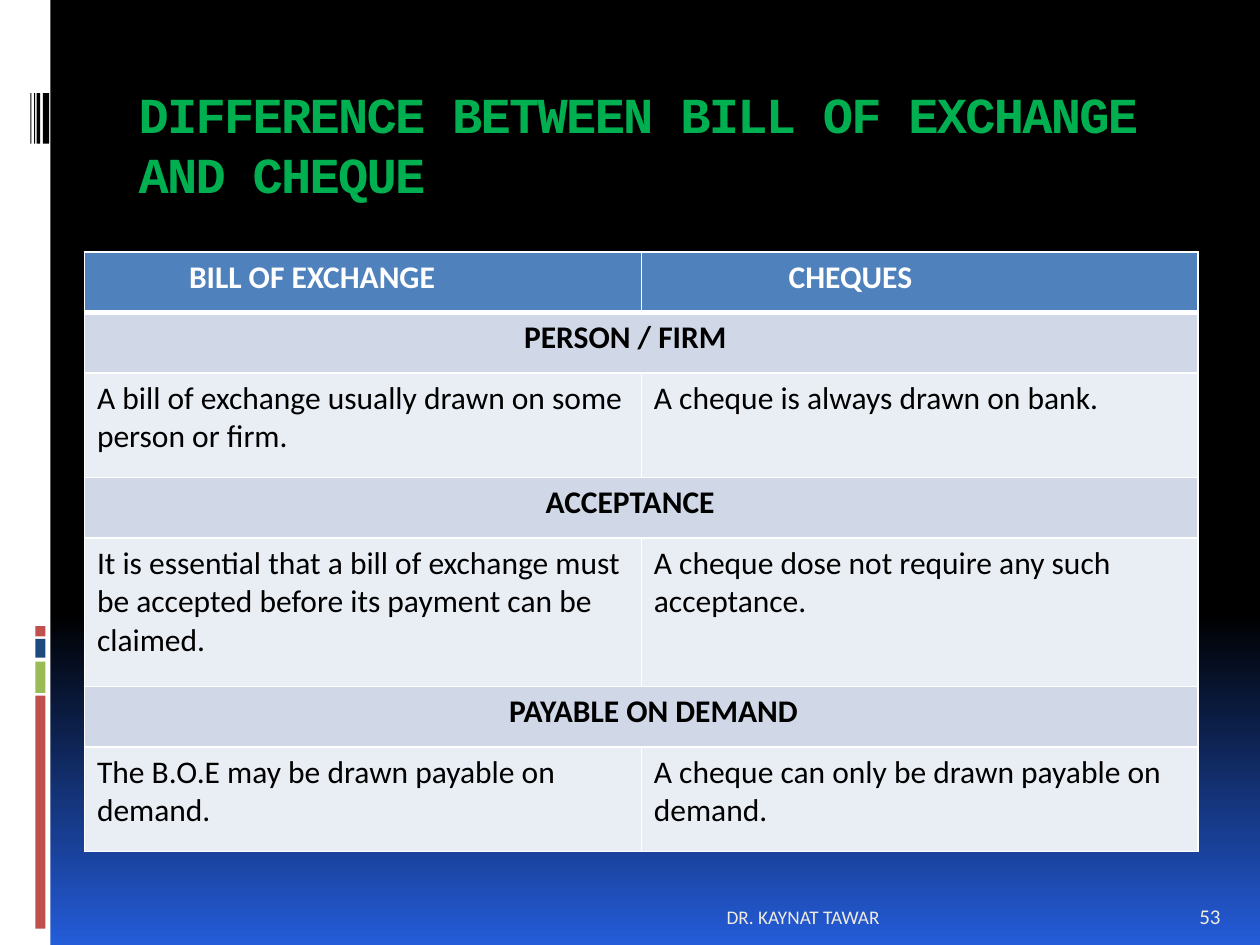
from copy import deepcopy

from lxml import etree
from pptx import Presentation
from pptx import util as u
from pptx.dml.color import RGBColor
from pptx.enum import shapes, text
from pptx.oxml.ns import qn

# Content
TITLE = "DIFFERENCE BETWEEN BILL OF EXCHANGE AND CHEQUE"
FOOTER, NUMBER = "DR. KAYNAT TAWAR", "53"
# Each entry is (text, left indent)
HEADER = [("BILL OF EXCHANGE", 0.83), ("CHEQUES", 1.17)]
SECTIONS = [
    (("PERSON / FIRM", 3.49),
     "A bill of exchange usually drawn on some person or firm.",
     "A cheque is always drawn on bank."),
    (("ACCEPTANCE", 3.66),
     "It is essential that a bill of exchange must be accepted before its payment can be claimed.",
     "A cheque dose not require any such acceptance."),
    (("PAYABLE ON DEMAND", 3.37),
     "The B.O.E may be drawn payable on demand.",
     "A cheque can only be drawn payable on demand."),
]

# Theme
THEME = {
    "font": "Calibri", "title_font": "Courier New",
    "title_size": 28.8, "body_size": 18, "number_size": 12, "footer_size": 11,
    "white": "FFFFFF", "black": "000000", "title": "00B050", "footer": "EEECE1",
    "header": "4F81BD", "band": "D0D8E8", "plain": "E9EDF4",
    "red": "C0504D", "green": "9BBB59", "navy": "1F497D",
}
BACKGROUND = [(0, "000000"), (0.65, "000000"), (1, "245CD9")]

# Layout in inches
WIDTH, HEIGHT = 10, 7.5
TABLE_LEFT, TABLE_TOP, COLUMN = 0.67, 2, 4.42
BAND_ROW, TEXT_ROWS = 0.48, [0.83, 1.18, 0.83]
INSET = 0.1
STACK_LEFT, STACK_WIDTH = 0.28, 0.08
STACK = [(4.97, 0.08, "red"), (5.07, 0.15, "navy"), (5.25, 0.25, "green"), (5.52, 1.85, "red")]
BARCODE_TOP, BARCODE_HEIGHT = 0.74, 0.4
BARCODE = [(0.24, 0.01), (0.27, 0.01), (0.29, 0.03), (0.34, 0.05)]


def rgb(name):
    return RGBColor.from_string(THEME[name])


def style(p, size, color, bold=False, font="font"):
    for r in p.runs:
        r.font.name, r.font.size = THEME[font], u.Pt(THEME[size])
        r.font.bold, r.font.color.rgb = bold, rgb(color)


def add_bar(s, left, top, width, height, color):
    sp = s.shapes.add_shape(shapes.MSO_SHAPE.RECTANGLE, *map(u.Inches, (left, top, width, height)))
    sp.shadow.inherit = False
    sp.fill.solid()
    sp.fill.fore_color.rgb = rgb(color)
    sp.line.fill.background()


def add_label(s, value, left, width, size, align):
    sp = s.shapes.add_textbox(*map(u.Inches, (left, 7.02, width, 0.4)))
    tf = sp.text_frame
    tf.word_wrap, tf.vertical_anchor = True, text.MSO_ANCHOR.BOTTOM
    tf.text = value
    tf.paragraphs[0].alignment = align
    style(tf.paragraphs[0], size, "footer")


def set_borders(cell, widths):
    tc_pr = cell._tc.get_or_add_tcPr()
    for side, width in widths.items():
        ln = etree.SubElement(tc_pr, qn("a:" + side), w=str(u.Pt(width)))
        fill = etree.SubElement(ln, qn("a:solidFill"))
        etree.SubElement(fill, qn("a:srgbClr"), val=THEME["white"])


def fill_cell(cell, value, indent, fill, color="black", bold=False):
    cell.text = value
    cell.margin_left = u.Inches(indent)
    cell.fill.solid()
    cell.fill.fore_color.rgb = rgb(fill)
    style(cell.text_frame.paragraphs[0], "body_size", color, bold)


def set_background(s):
    fill = s.background.fill
    fill.gradient()
    fill.gradient_angle = 270
    stops = s.element.find(".//" + qn("a:gsLst"))
    stops.insert(1, deepcopy(stops[0]))
    for stop, (position, color) in zip(fill.gradient_stops, BACKGROUND):
        stop.position = position
        stop.color.rgb = RGBColor.from_string(color)


def add_title(s):
    sp = s.shapes.title
    sp.left, sp.top, sp.width, sp.height = map(u.Inches, (1, 0.56, 8.5, 1))
    tf = sp.text_frame
    tf.text = TITLE
    tf.word_wrap, tf.auto_size = True, text.MSO_AUTO_SIZE.NONE
    tf.vertical_anchor, tf.margin_top = text.MSO_ANCHOR.TOP, u.Inches(0.1)
    p = tf.paragraphs[0]
    p.alignment, p.line_spacing = text.PP_ALIGN.LEFT, u.Pt(34.3)
    style(p, "title_size", "title", True, "title_font")
    p.runs[0].font._element.set("spc", "-100")


def add_comparison(s):
    heights = [BAND_ROW]
    for height in TEXT_ROWS:
        heights += [BAND_ROW, height]
    frame = s.shapes.add_table(len(heights), 2, *map(
        u.Inches, (TABLE_LEFT, TABLE_TOP, 2 * COLUMN, sum(heights))))
    table = frame.table
    for column in table.columns:
        column.width = u.Inches(COLUMN)
    for i, height in enumerate(heights):
        table.rows[i].height = u.Inches(height)
        for cell in table.rows[i].cells:
            set_borders(cell, {"lnL": 1, "lnR": 1, "lnT": 3 if i == 1 else 1,
                               "lnB": 3 if i == 0 else 1})
    for j, (value, indent) in enumerate(HEADER):
        fill_cell(table.cell(0, j), value, indent, "header", "white", True)
    for k, ((heading, indent), *details) in enumerate(SECTIONS):
        row = 1 + 2 * k
        band = table.cell(row, 0)
        band.merge(table.cell(row, 1))
        fill_cell(band, heading, indent, "band", bold=True)
        for j, value in enumerate(details):
            fill_cell(table.cell(row + 1, j), value, INSET, "plain")


def main():
    prs = Presentation()
    prs.slide_width, prs.slide_height = u.Inches(WIDTH), u.Inches(HEIGHT)
    s = prs.slides.add_slide(prs.slide_layouts[5])
    set_background(s)

    # Side strip with colour stack and barcode
    add_bar(s, 0, 0, 0.4, HEIGHT, "white")
    for top, height, color in STACK:
        add_bar(s, STACK_LEFT, top, STACK_WIDTH, height, color)
    for left, width in BARCODE:
        add_bar(s, left, BARCODE_TOP, width, BARCODE_HEIGHT, "black")

    # Title, table and footer
    add_title(s)
    add_comparison(s)
    add_label(s, NUMBER, 9.42, 0.5, "number_size", text.PP_ALIGN.LEFT)
    add_label(s, FOOTER, 1, 6.08, "footer_size", text.PP_ALIGN.RIGHT)
    prs.save("out.pptx")


if __name__ == "__main__":
    main()
